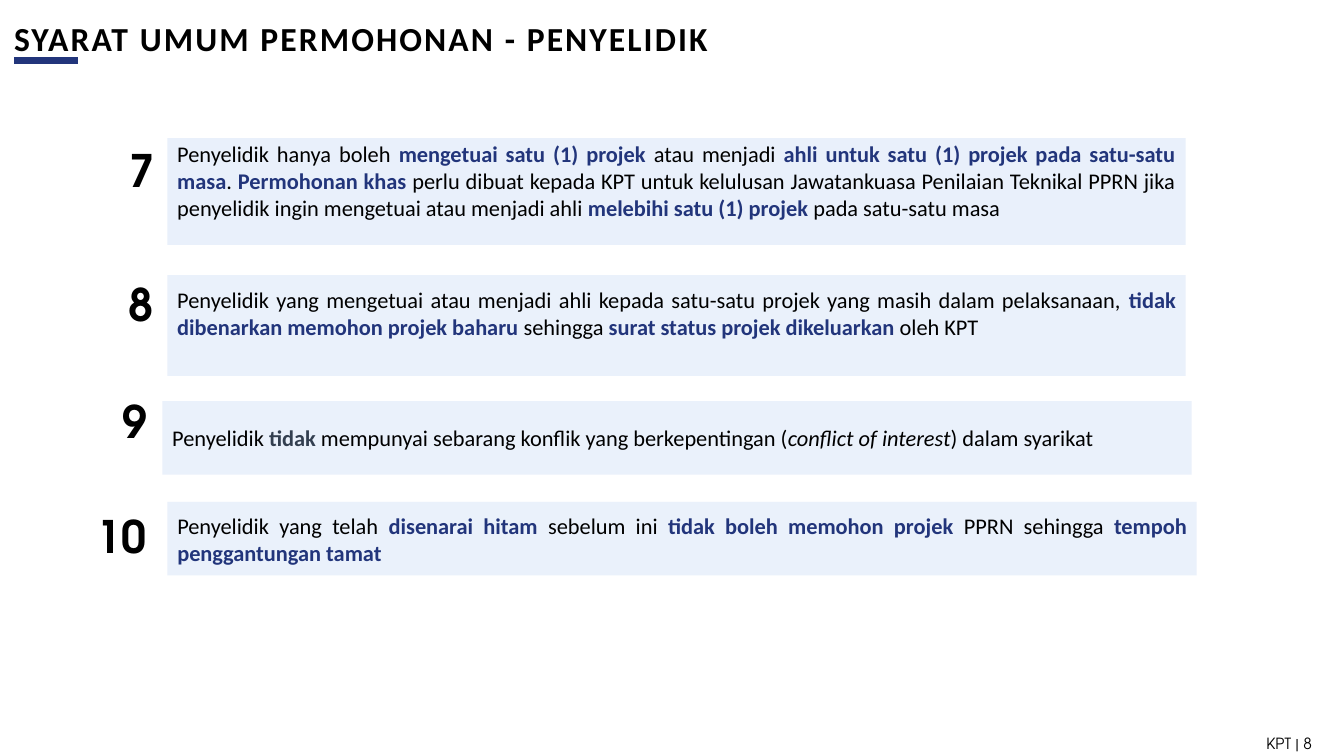
"""Builds the slide of general application conditions for researchers."""
from lxml.etree import SubElement
from pptx import Presentation
from pptx.dml.color import RGBColor
from pptx.enum.shapes import MSO_CONNECTOR, MSO_SHAPE
from pptx.enum.text import MSO_ANCHOR, PP_ALIGN
from pptx.oxml.ns import qn
from pptx.util import Inches, Pt

BLACK = RGBColor(0x00, 0x00, 0x00)
NAVY = RGBColor(0x22, 0x35, 0x7B)
SLATE = RGBColor(0x33, 0x3F, 0x50)
PALE_BLUE = RGBColor(0xE5, 0xEE, 0xFB)
BODY_FONT = "Calibri"
NUMBER_FONT = "TeX Gyre Adventor"

STYLES = {
    "plain": (BLACK, False, False),
    "key": (NAVY, True, False),
    "muted": (SLATE, True, False),
    "italic": (BLACK, False, True),
}

TITLE = "SYARAT UMUM PERMOHONAN - PENYELIDIK"
FOOTER = "KPT | 8"
CONDITIONS = [
    {
        "number": "7", "number_box": (1.19, 1.37, 0.39, 0.64),
        "panel": (1.66, 1.37, 10.1, 1.06), "opacity": 83, "insets": (0, 0.22),
        "wording": [
            ("Penyelidik hanya boleh ", "plain"),
            ("mengetuai satu (1) projek ", "key"),
            ("atau menjadi ", "plain"),
            ("ahli untuk satu (1) projek pada satu-satu masa", "key"),
            (". ", "plain"),
            ("Permohonan khas ", "key"),
            ("perlu dibuat kepada KPT untuk kelulusan Jawatankuasa Penilaian Teknikal "
             "PPRN jika penyelidik ingin mengetuai atau menjadi ahli ", "plain"),
            ("melebihi satu (1) projek ", "key"),
            ("pada satu-satu masa", "plain"),
        ],
    },
    {
        "number": "8", "number_box": (1.18, 2.7, 0.34, 0.64),
        "panel": (1.66, 2.73, 10.1, 1), "opacity": 80, "insets": (0.05, 0.29),
        "wording": [
            ("Penyelidik yang mengetuai atau menjadi ahli kepada satu-satu projek "
             "yang masih dalam pelaksanaan, ", "plain"),
            ("tidak dibenarkan memohon projek baharu ", "key"),
            ("sehingga ", "plain"),
            ("surat status projek dikeluarkan ", "key"),
            ("oleh KPT", "plain"),
        ],
    },
    {
        "number": "9", "number_box": (1.12, 3.86, 0.37, 0.64),
        "panel": (1.61, 3.98, 10.21, 0.73), "opacity": 80, "insets": (0.05, 0.05),
        "wording": [
            ("Penyelidik ", "plain"),
            ("tidak ", "muted"),
            ("mempunyai sebarang konflik yang berkepentingan (", "plain"),
            ("conflict of interest", "italic"),
            (") dalam syarikat", "plain"),
        ],
    },
    {
        "number": "10", "number_box": (0.86, 5, 0.72, 0.64),
        "panel": (1.66, 4.98, 10.21, 0.73), "opacity": 80, "insets": (0.05, 0.05),
        "wording": [
            ("Penyelidik yang telah ", "plain"),
            ("disenarai hitam ", "key"),
            ("sebelum ini ", "plain"),
            ("tidak boleh memohon projek ", "key"),
            ("PPRN sehingga ", "plain"),
            ("tempoh penggantungan tamat", "key"),
        ],
    },
]


def style_font(font, name, size, color=BLACK, bold=False, italic=False):
    font.name, font.size = name, Pt(size)
    font.bold, font.italic = bold, italic
    font.color.rgb = color


def add_label(slide, box, text, font_name, size, bold, align, anchor):
    label = slide.shapes.add_textbox(*map(Inches, box))
    frame = label.text_frame
    frame.text = text
    frame.word_wrap = True
    frame.vertical_anchor = anchor
    line = frame.paragraphs[0]
    line.alignment = align
    style_font(line.runs[0].font, font_name, size, bold=bold)
    return frame


def add_title(slide):
    frame = add_label(slide, (0.14, 0.15, 8.61, 0.46), TITLE, BODY_FONT, 24,
                      True, PP_ALIGN.LEFT, MSO_ANCHOR.MIDDLE)
    frame.margin_left = frame.margin_right = 0
    frame.paragraphs[0].runs[0].font._element.set("spc", "150")
    underline = slide.shapes.add_connector(
        MSO_CONNECTOR.STRAIGHT, *map(Inches, (0.14, 0.6, 0.77, 0.6)))
    underline.line.color.rgb = NAVY
    underline.line.width = Pt(4.5)
    SubElement(underline._element.spPr, qn("a:effectLst"))


def add_condition(slide, condition):
    panel = slide.shapes.add_shape(MSO_SHAPE.RECTANGLE, *map(Inches, condition["panel"]))
    panel.shadow.inherit = False
    panel.line.fill.background()
    panel.fill.solid()
    panel.fill.fore_color.rgb = PALE_BLUE
    tint = panel._element.spPr.find(qn("a:solidFill"))[0]
    SubElement(tint, qn("a:alpha"), val=str(condition["opacity"] * 1000))

    frame = panel.text_frame
    frame.word_wrap = True
    frame.vertical_anchor = MSO_ANCHOR.MIDDLE
    frame.margin_top, frame.margin_bottom = map(Inches, condition["insets"])
    sentence = frame.paragraphs[0]
    sentence.alignment = PP_ALIGN.JUSTIFY
    for text, style in condition["wording"]:
        run = sentence.add_run()
        run.text = text
        style_font(run.font, BODY_FONT, 16, *STYLES[style])

    add_label(slide, condition["number_box"], condition["number"], NUMBER_FONT, 32,
              True, PP_ALIGN.JUSTIFY, MSO_ANCHOR.TOP)


def main():
    deck = Presentation()
    deck.slide_width, deck.slide_height = Inches(13.33), Inches(7.5)
    slide = deck.slides.add_slide(deck.slide_layouts[6])
    add_title(slide)
    add_label(slide, (9.94, 7.22, 3.17, 0.3), FOOTER, NUMBER_FONT, 11,
              False, PP_ALIGN.RIGHT, MSO_ANCHOR.MIDDLE)
    for condition in CONDITIONS:
        add_condition(slide, condition)
    deck.save("out.pptx")


if __name__ == "__main__":
    main()
